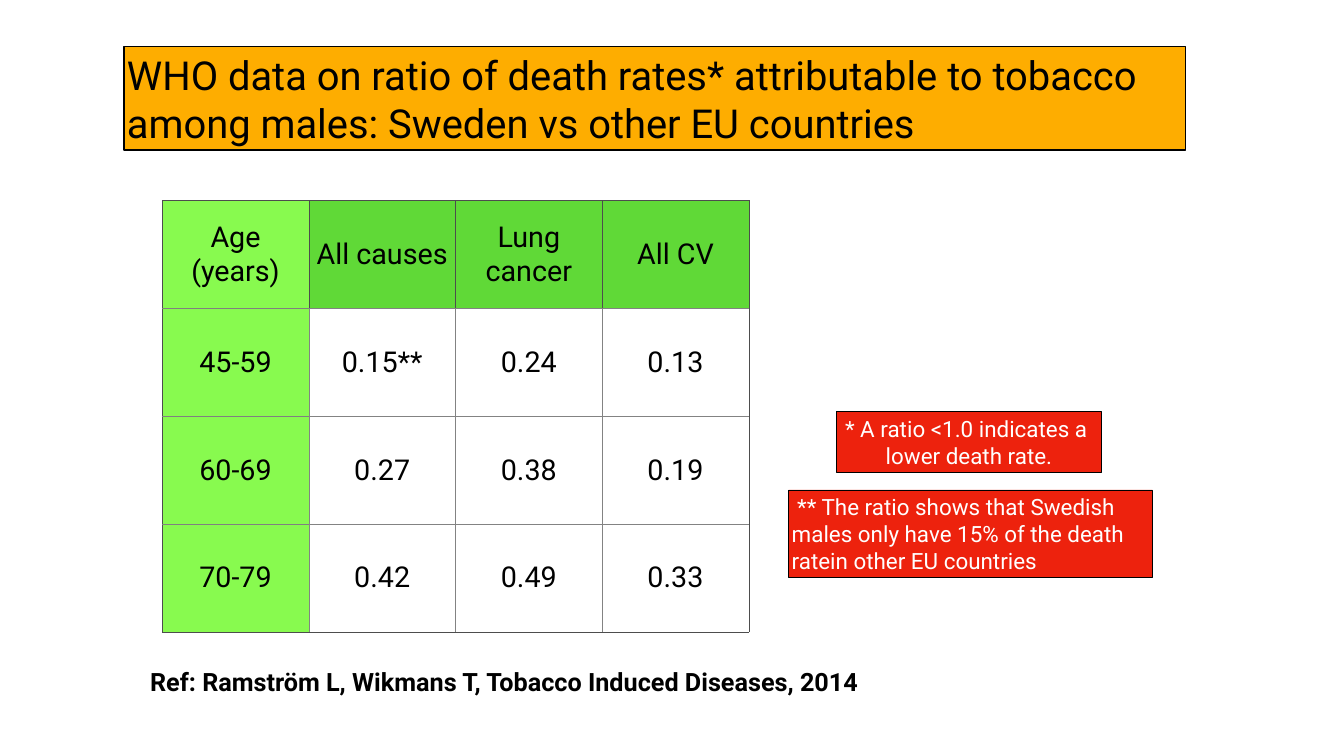
import dataclasses
import typing

import lxml.etree
import pptx
import pptx.dml.color
import pptx.enum.shapes
import pptx.enum.text
import pptx.oxml.ns
import pptx.util

Inches = pptx.util.Inches
Align = pptx.enum.text.PP_ALIGN
Anchor = pptx.enum.text.MSO_ANCHOR


@dataclasses.dataclass(frozen=True)
class Theme:
    font: str = "Roboto"
    black: str = "000000"
    white: str = "FFFFFF"
    orange: str = "FEAD00"
    red: str = "ED220D"
    header_green: str = "60D937"
    age_green: str = "88FA4F"
    outer_border: str = "4D4D4D"
    age_border: str = "808080"
    inner_border: str = "838383"
    title_size: int = 57
    table_size: int = 41
    reference_size: int = 36
    note_size: int = 32


THEME = Theme()


@dataclasses.dataclass(frozen=True)
class TextPanel:
    left: float
    top: float
    width: float
    height: float
    lines: tuple[str, ...]
    size: int
    color: str = THEME.black
    fill: typing.Optional[str] = None
    line_width: float = 1
    align: Align = Align.LEFT
    bold: bool = False


PANELS = (
    TextPanel(2.46, 0.92, 21.07, 2.06,
              ("WHO data on ratio of death rates* attributable to tobacco "
               "among males: Sweden vs other EU countries",),
              THEME.title_size, fill=THEME.orange, line_width=2),
    TextPanel(2.92, 13.16, 15.08, 0.71,
              ("Ref: Ramström L, Wikmans T, Tobacco Induced Diseases, 2014",),
              THEME.reference_size, bold=True),
    TextPanel(16.6, 8.17, 5.26, 1.2,
              ("* A ratio <1.0 indicates a ", "lower death rate."),
              THEME.note_size, THEME.white, THEME.red, align=Align.CENTER),
    TextPanel(15.65, 9.72, 7.22, 1.74,
              (" ** The ratio shows that Swedish",
               "males only have 15% of the death",
               "ratein other EU countries"),
              THEME.note_size, THEME.white, THEME.red),
)

DEATH_RATIOS = (
    ("Age (years)", "All causes", "Lung cancer", "All CV"),
    ("45-59", "0.15**", "0.24", "0.13"),
    ("60-69", "0.27", "0.38", "0.19"),
    ("70-79", "0.42", "0.49", "0.33"),
)


def rgb(value: str) -> pptx.dml.color.RGBColor:
    return pptx.dml.color.RGBColor.from_string(value)


def apply_format(target: typing.Any, values: dict[str, typing.Any]) -> None:
    for name, value in values.items():
        setattr(target, name, value)


def set_margins(target: typing.Any) -> None:
    sides = ("left", "right", "top", "bottom")
    apply_format(target, {f"margin_{side}": Inches(0.06) for side in sides})


def write_lines(frame, lines: tuple[str, ...], size: int, color: str,
                align: Align, bold: bool = False) -> None:
    for index, line in enumerate(lines):
        para = frame.add_paragraph() if index else frame.paragraphs[0]
        para.alignment = align
        span = para.add_run()
        span.text = line
        apply_format(span.font, {"name": THEME.font, "bold": bold,
                                 "size": pptx.util.Pt(size)})
        span.font.color.rgb = rgb(color)


def draw_panel(page, panel: TextPanel) -> None:
    bounds = [Inches(value) for value in
              (panel.left, panel.top, panel.width, panel.height)]
    if panel.fill:
        box = page.shapes.add_shape(
            pptx.enum.shapes.MSO_SHAPE.RECTANGLE, *bounds)
        box.shadow.inherit = False
        box.fill.solid()
        box.fill.fore_color.rgb = rgb(panel.fill)
        box.line.color.rgb = rgb(THEME.black)
        box.line.width = pptx.util.Pt(panel.line_width)
    else:
        box = page.shapes.add_textbox(*bounds)
    frame = box.text_frame
    apply_format(frame, {"word_wrap": True, "vertical_anchor": Anchor.MIDDLE})
    set_margins(frame)
    write_lines(frame, panel.lines, panel.size, panel.color,
                panel.align, panel.bold)


def set_borders(cell, colors: dict[str, str]) -> None:
    properties = cell._tc.get_or_add_tcPr()
    for index, (side, color) in enumerate(colors.items()):
        line = lxml.etree.Element(pptx.oxml.ns.qn(f"a:ln{side}"),
                                  w=str(pptx.util.Pt(1)))
        fill = lxml.etree.SubElement(line, pptx.oxml.ns.qn("a:solidFill"))
        lxml.etree.SubElement(fill, pptx.oxml.ns.qn("a:srgbClr"), val=color)
        properties.insert(index, line)


def border_colors(row: int, column: int) -> dict[str, str]:
    inner = THEME.inner_border if column else THEME.age_border
    last_row, last_column = len(DEATH_RATIOS) - 1, len(DEATH_RATIOS[0]) - 1
    outer_sides = {"L": column == 0, "R": column == last_column,
                   "T": False, "B": row == last_row}
    return {side: THEME.outer_border if row == 0 or is_outer else inner
            for side, is_outer in outer_sides.items()}


def draw_ratio_table(page) -> None:
    row_count, column_count = len(DEATH_RATIOS), len(DEATH_RATIOS[0])
    table = page.shapes.add_table(
        row_count, column_count, Inches(3.22), Inches(3.98),
        Inches(2.91 * column_count), Inches(2.14 * row_count)).table
    apply_format(table, {"first_row": False, "horz_banding": False})
    for row, values in enumerate(DEATH_RATIOS):
        for column, value in enumerate(values):
            cell = table.cell(row, column)
            cell.vertical_anchor = Anchor.MIDDLE
            set_margins(cell)
            if row and column:
                cell.fill.background()
            else:
                cell.fill.solid()
                cell.fill.fore_color.rgb = rgb(
                    THEME.header_green if column else THEME.age_green)
            set_borders(cell, border_colors(row, column))
            write_lines(cell.text_frame, (value,), THEME.table_size,
                        THEME.black, Align.CENTER)


def main() -> None:
    deck = pptx.Presentation()
    apply_format(deck, {"slide_width": Inches(26.67),
                        "slide_height": Inches(15)})
    page = deck.slides.add_slide(deck.slide_layouts[6])
    draw_ratio_table(page)
    for panel in PANELS:
        draw_panel(page, panel)
    deck.save("out.pptx")


if __name__ == "__main__":
    main()
